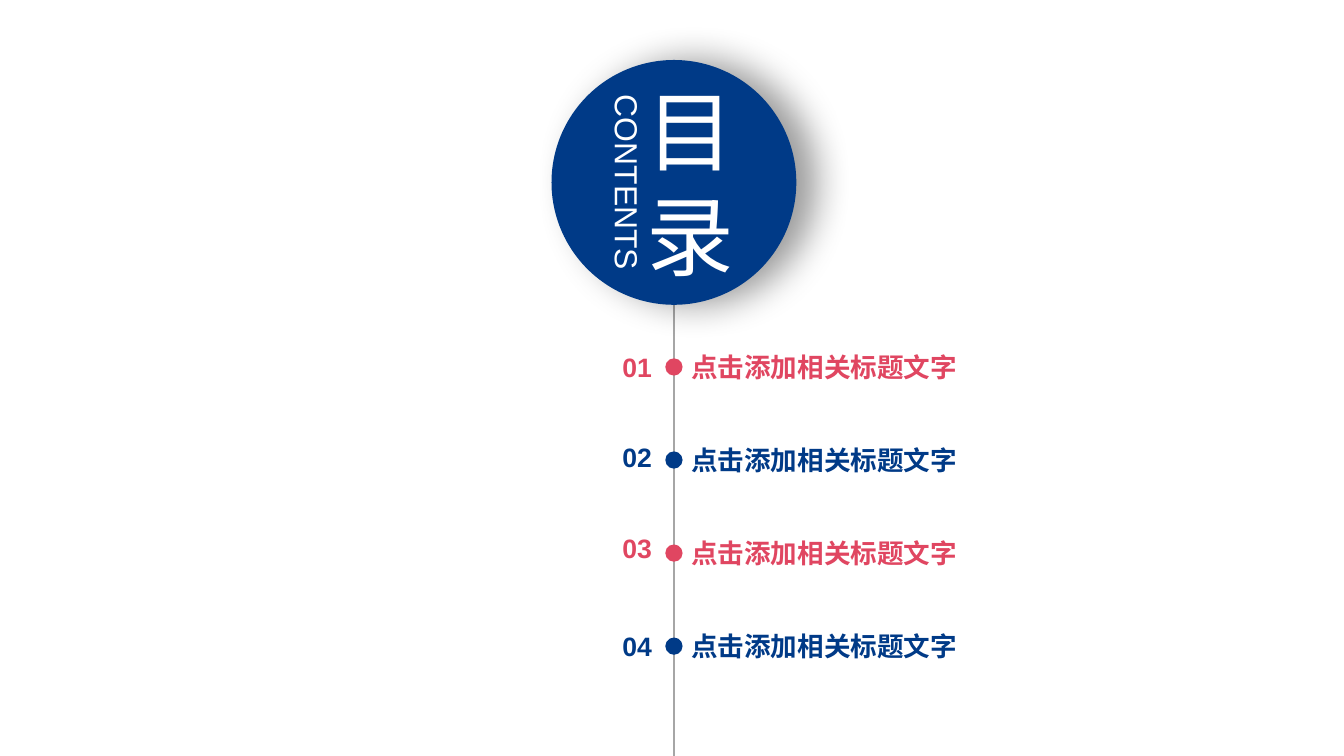
import pptx
import pptx.util
import pptx.dml.color
import pptx.enum.shapes
import pptx.enum.text
import pptx.oxml
import pptx.oxml.ns
from lxml import etree

Pt = pptx.util.Pt
SHAPE = pptx.enum.shapes.MSO_SHAPE
ALIGN = pptx.enum.text.PP_ALIGN
ANCHOR = pptx.enum.text.MSO_ANCHOR
AUTO_SIZE = pptx.enum.text.MSO_AUTO_SIZE
qn = pptx.oxml.ns.qn

COLORS = {"navy": "003A87", "rose": "E04661", "axis": "A6A6A6", "white": "FFFFFF"}
FONT = "Arial"
PAGE_WIDTH, PAGE_HEIGHT = 1012.32, 569.52
AXIS_X = 507.6

# Section title, accent and vertical nudge of its number
SECTIONS = [
    ("点击添加相关标题文字", "rose", 0),
    ("点击添加相关标题文字", "navy", -2),
    ("点击添加相关标题文字", "rose", -3.5),
    ("点击添加相关标题文字", "navy", 0),
]


def color(name):
    return pptx.dml.color.RGBColor.from_string(COLORS[name])


def write(box, *lines, size, fill, bold=False, align=ALIGN.LEFT,
          anchor=ANCHOR.TOP, margins=(0, 0), auto_size=AUTO_SIZE.NONE):
    """Fill a box with one paragraph per line."""
    frame = box.text_frame
    frame.word_wrap = True
    frame.auto_size = auto_size
    frame.vertical_anchor = anchor
    frame.margin_left = frame.margin_right = Pt(margins[0])
    frame.margin_top = frame.margin_bottom = Pt(margins[1])
    for index, line in enumerate(lines):
        para = frame.add_paragraph() if index else frame.paragraphs[0]
        para.alignment = align
        span = para.add_run()
        span.text = line
        span.font.name = FONT
        span.font.size = Pt(size)
        span.font.bold = bold
        span.font.color.rgb = color(fill)
        east_asian = etree.SubElement(span.font._element, qn("a:ea"))
        east_asian.set("typeface", FONT)


def add_text(page, left, top, width, height, *lines, **style):
    box = page.shapes.add_textbox(Pt(left), Pt(top), Pt(width), Pt(height))
    write(box, *lines, **style)
    return box


def add_disc(page, left, top, diameter, fill):
    disc = page.shapes.add_shape(SHAPE.OVAL, Pt(left), Pt(top), Pt(diameter), Pt(diameter))
    disc.shadow.inherit = False
    disc.fill.solid()
    disc.fill.fore_color.rgb = color(fill)
    disc.line.fill.background()
    return disc


def add_soft_shadow(shape, blur, distance, opacity):
    effects = shape._element.spPr.find(qn("a:effectLst"))
    shadow = etree.SubElement(effects, qn("a:outerShdw"), blurRad=str(Pt(blur)),
                              dist=str(Pt(distance)), dir="0", algn="l", rotWithShape="0")
    black = etree.SubElement(shadow, qn("a:srgbClr"), val="000000")
    etree.SubElement(black, qn("a:alpha"), val=str(opacity * 1000))


def draw_axis(page, top, bottom):
    axis = page.shapes.add_connector(pptx.enum.shapes.MSO_CONNECTOR.STRAIGHT,
                                     Pt(AXIS_X), Pt(top), Pt(AXIS_X), Pt(bottom))
    axis.line.color.rgb = color("axis")
    axis.line.width = Pt(1.5)
    etree.SubElement(axis._element.spPr, qn("a:effectLst"))


def draw_sections(page, top, pitch):
    """Place number, dot and title of each section along the axis."""
    dot, height = 13, 24.5
    for index, (title, accent, nudge) in enumerate(SECTIONS):
        row = top + index * pitch
        style = dict(size=20, fill=accent, bold=True, auto_size=AUTO_SIZE.SHAPE_TO_FIT_TEXT)
        add_disc(page, AXIS_X - dot / 2, row + (height - dot) / 2, dot, accent)
        add_text(page, AXIS_X - 59, row + nudge, 42.5, height, f"{index + 1:02d}",
                 align=ALIGN.RIGHT, **style)
        add_text(page, AXIS_X + 13, row, 242.5, height, title, **style)


def draw_heading(page, left, top, diameter):
    """Place the shadowed circle with the title and its upright caption."""
    circle = add_disc(page, left, top, diameter, "navy")
    add_soft_shadow(circle, blur=28, distance=15, opacity=40)

    title = page.shapes.title
    title.left, title.top = Pt(left + 45.4), Pt(top + 6.5)
    title.width, title.height = Pt(118.8), Pt(171.4)
    write(title, "目", "录", size=66, fill="white", align=ALIGN.CENTER, anchor=ANCHOR.MIDDLE)
    circle._element.addnext(title._element)  # bring the title in front of the circle

    caption = add_text(page, left - 32.4, top + 74.2, 179.3, 36, "CONTENTS",
                       size=24, fill="white", align=ALIGN.CENTER, margins=(7.2, 3.6),
                       auto_size=AUTO_SIZE.SHAPE_TO_FIT_TEXT)
    caption.rotation = 90


def main():
    deck = pptx.Presentation()
    deck.slide_width, deck.slide_height = Pt(PAGE_WIDTH), Pt(PAGE_HEIGHT)
    page = deck.slides.add_slide(deck.slide_layouts[5])
    diameter = 184.4
    draw_axis(page, top=52, bottom=PAGE_HEIGHT)
    draw_sections(page, top=264.2, pitch=70.1)
    draw_heading(page, AXIS_X - diameter / 2, 45.2, diameter)
    deck.save("out.pptx")


if __name__ == "__main__":
    main()
